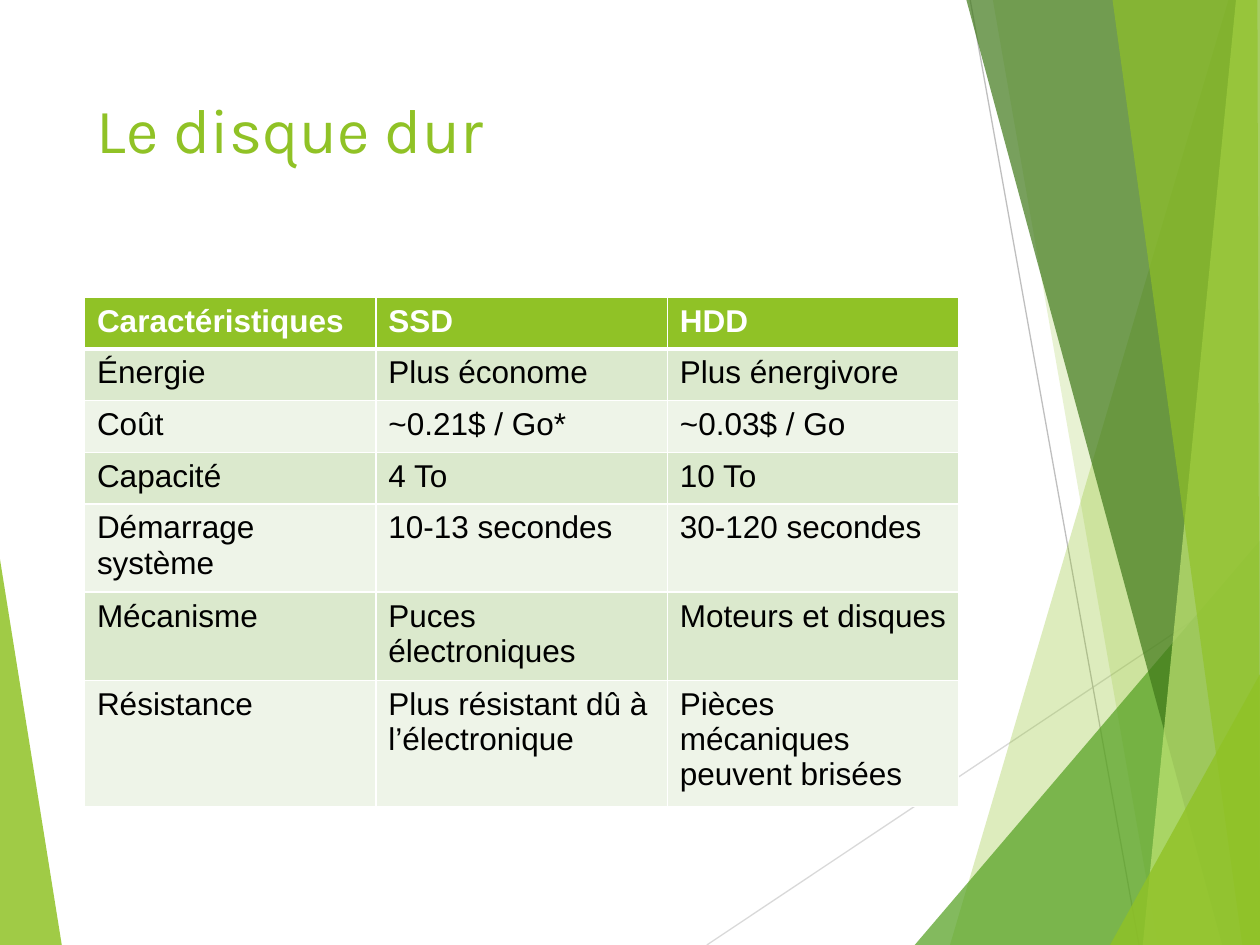
import pptx
import pptx.util
import pptx.dml.color
import pptx.enum.shapes
import pptx.enum.text
import pptx.oxml
import pptx.oxml.ns
from pptx.util import Inches, Pt
from pptx.dml.color import RGBColor

LIME = RGBColor(0x90, 0xC2, 0x26)
GREEN = RGBColor(0x54, 0xA0, 0x21)
DARK = RGBColor(0x3F, 0x78, 0x19)
PALE = RGBColor(0xC0, 0xE4, 0x74)
BAND = RGBColor(0xDB, 0xE9, 0xCD)
LIGHT = RGBColor(0xEE, 0xF4, 0xE8)
WHITE = RGBColor(0xFF, 0xFF, 0xFF)
BLACK = RGBColor(0, 0, 0)
GRAY = RGBColor(0xD9, 0xD9, 0xD9)
MID = RGBColor(0xBF, 0xBF, 0xBF)

WIDE, HIGH = 10, 7.5
TITLE = "Le disque dur"
ROWS = [
    ("Caractéristiques", "SSD", "HDD"),
    ("Énergie", "Plus économe", "Plus énergivore"),
    ("Coût", "~0.21$ / Go*", "~0.03$ / Go"),
    ("Capacité", "4 To", "10 To"),
    ("Démarrage système", "10-13 secondes", "30-120 secondes"),
    ("Mécanisme", "Puces électroniques", "Moteurs et disques"),
    ("Résistance", "Plus résistant dû à l’électronique", "Pièces mécaniques peuvent brisées"),
]
LEFT, SPAN = 0.67, 6.94
TOP, TALL, ROW = 2.36, 3.72, 0.41
LINES = [
    ((5.61, HIGH), (WIDE, 4.57), GRAY),
    ((7.7, 0), (9.04, HIGH), MID),
]
EDGE = [(WIDE, HIGH), (WIDE, 0)]
WEDGE = ([(0, 4.44), (0.49, HIGH), (0, HIGH)], LIME, 85)
SHARDS = [
    ([(9.75, 0), (7.54, HIGH)] + EDGE, LIME, 30),
    ([(7.88, 0), (9.19, HIGH)] + EDGE, LIME, 20),
    ([(7.26, HIGH), (WIDE, 4.29), (WIDE, HIGH)], GREEN, 72),
    ([(7.67, 0), (9.7, HIGH)] + EDGE, DARK, 70),
    ([(9.81, 0), (9.07, HIGH)] + EDGE, PALE, 70),
    ([(8.83, 0), (9.86, HIGH), (WIDE, HIGH), (9.98, 0)], LIME, 65),
    ([(8.81, HIGH), (WIDE, 5.35), (WIDE, HIGH)], LIME, 80),
]
HEAD = {"size": Pt(18), "name": "Arial", "bold": True}
BODY = {**HEAD, "bold": False}
NAME = {"size": Pt(36), "name": "Karla", "bold": False}
SPACE = pptx.oxml.ns.nsdecls("a")


def style(font, look, tint):
    for key, value in look.items():
        setattr(font, key, value)
    font.color.rgb = tint


def add_line(slide, start, end, tint):
    line = slide.shapes.add_connector(
        pptx.enum.shapes.MSO_CONNECTOR.STRAIGHT, *map(Inches, start + end))
    line.line.color.rgb = tint
    line.line.width = Pt(0.75)
    line._element.spPr.append(pptx.oxml.parse_xml(f"<a:effectLst {SPACE}/>"))


def add_shard(slide, points, tint, alpha):
    spots = [(Inches(x), Inches(y)) for x, y in points]
    pen = slide.shapes.build_freeform(*spots[0])
    pen.add_line_segments(spots[1:], close=True)
    shard = pen.convert_to_shape()
    shard.shadow.inherit = False
    shard.line.fill.background()
    shard.fill.solid()
    shard.fill.fore_color.rgb = tint
    hue = shard._element.spPr.find(".//" + pptx.oxml.ns.qn("a:srgbClr"))
    hue.append(pptx.oxml.parse_xml(f'<a:alpha {SPACE} val="{alpha * 1000}"/>'))


def add_title(slide):
    box = slide.shapes.add_textbox(*map(Inches, (LEFT, 0.67, SPAN, 1.44)))
    box.text_frame.word_wrap = True
    box.text_frame.vertical_anchor = pptx.enum.text.MSO_ANCHOR.TOP
    run = box.text_frame.paragraphs[0].add_run()
    run.text = TITLE
    style(run.font, NAME, LIME)


def add_edges(cell, head):
    props = cell._tc.get_or_add_tcPr()
    for side in "LRTB":
        width = Pt(3 if head and side == "B" else 1)
        props.append(pptx.oxml.parse_xml(
            f'<a:ln{side} {SPACE} w="{width}"><a:solidFill>'
            f'<a:srgbClr val="{WHITE}"/></a:solidFill></a:ln{side}>'))


def add_grid(slide):
    frame = slide.shapes.add_table(
        len(ROWS), len(ROWS[0]), *map(Inches, (LEFT, TOP, SPAN, TALL)))
    grid = frame.table
    for r, row in enumerate(ROWS):
        grid.rows[r].height = Inches(ROW)
        head = r == 0
        for c, text in enumerate(row):
            cell = grid.cell(r, c)
            add_edges(cell, head)
            cell.fill.solid()
            cell.fill.fore_color.rgb = LIME if head else BAND if r % 2 else LIGHT
            run = cell.text_frame.paragraphs[0].add_run()
            run.text = text
            style(run.font, HEAD if head else BODY, WHITE if head else BLACK)
    frame.height = Inches(TALL)


def main():
    deck = pptx.Presentation()
    deck.slide_width, deck.slide_height = Inches(WIDE), Inches(HIGH)
    slide = deck.slides.add_slide(deck.slide_layouts[6])
    add_shard(slide, *WEDGE)
    for line in LINES:
        add_line(slide, *line)
    for shard in SHARDS:
        add_shard(slide, *shard)
    add_title(slide)
    add_grid(slide)
    deck.save("out.pptx")


if __name__ == "__main__":
    main()
